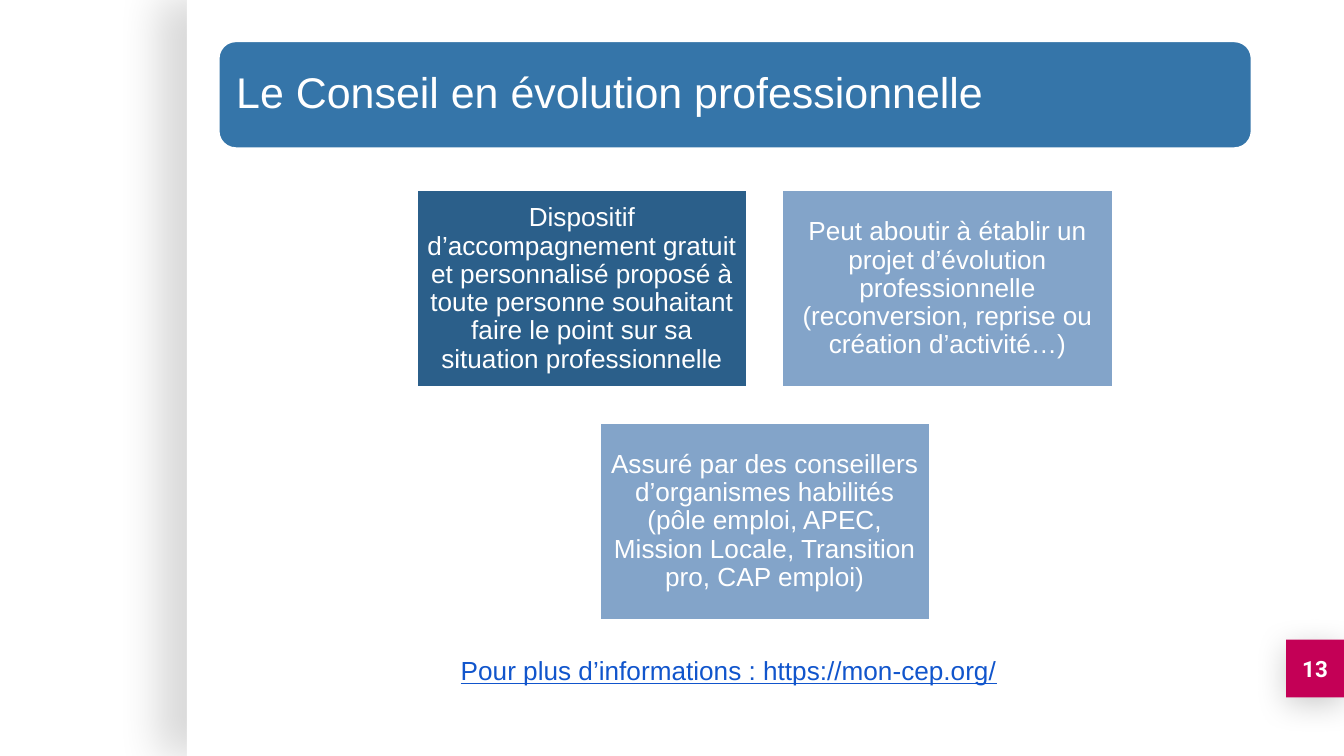
from lxml import etree
from pptx import Presentation
from pptx.dml.color import RGBColor
from pptx.enum.shapes import MSO_SHAPE
from pptx.enum.text import MSO_ANCHOR, PP_ALIGN
from pptx.oxml.ns import qn
from pptx.util import Inches, Pt

RECTANGLE, ROUNDED = MSO_SHAPE.RECTANGLE, MSO_SHAPE.ROUNDED_RECTANGLE
MIDDLE, TOP = MSO_ANCHOR.MIDDLE, MSO_ANCHOR.TOP
LEFT, CENTER = PP_ALIGN.LEFT, PP_ALIGN.CENTER

WHITE = RGBColor(0xFF, 0xFF, 0xFF)
MAGENTA = RGBColor(0xC4, 0x00, 0x56)
BLUE = RGBColor(0x35, 0x75, 0xA9)
DARK_BLUE = RGBColor(0x2B, 0x5F, 0x8A)
LIGHT_BLUE = RGBColor(0x83, 0xA4, 0xC9)
LINK_BLUE = RGBColor(0x11, 0x55, 0xCC)

TITLE = "Le Conseil en évolution professionnelle"
CARD_ROWS = [
    [
        ("Dispositif d’accompagnement gratuit et personnalisé proposé à toute "
         "personne souhaitant faire le point sur sa situation professionnelle", DARK_BLUE),
        ("Peut aboutir à établir un projet d’évolution professionnelle "
         "(reconversion, reprise ou création d’activité…)", LIGHT_BLUE),
    ],
    [
        ("Assuré par des conseillers d’organismes habilités (pôle emploi, APEC, "
         "Mission Locale, Transition pro, CAP emploi)", LIGHT_BLUE),
    ],
]
MORE_INFORMATION = "Pour plus d’informations : https://mon-cep.org/"
PAGE_NUMBER = "13"

SLIDE_WIDTH = 10
SLIDE_HEIGHT = SLIDE_WIDTH * 9 / 16
PANEL_LEFT = 1.39
BADGE_SIZE, BADGE_TOP = 0.43, 4.76
CARD_WIDTH, CARD_HEIGHT, CARD_GAP = 2.47, 1.48, 0.25
CARDS_CENTER, CARDS_TOP = 5.69, 1.41

TITLE_FONT = {"name": "Arial", "size": Pt(23)}
BODY_FONT = {"name": "Arial", "size": Pt(14)}
LINK_FONT = {**BODY_FONT, "underline": True}
BADGE_FONT = {"name": "Roboto", "size": Pt(12), "bold": True}


def add_block(slide, box, fill, geometry=RECTANGLE, outlined=False):
    shape = slide.shapes.add_shape(geometry, *map(Inches, box))
    shape.shadow.inherit = False
    shape.fill.solid()
    shape.fill.fore_color.rgb = fill
    if outlined:
        shape.line.color.rgb = WHITE
        shape.line.width = Pt(2)
    else:
        shape.line.fill.background()
    return shape


def add_shadow(shape, opacity, blur, distance, angle):
    effects = shape._element.spPr.find(qn("a:effectLst"))
    shadow = etree.SubElement(
        effects, qn("a:outerShdw"), blurRad=str(Pt(blur)), dist=str(Pt(distance)),
        dir=str(angle * 60000), algn="bl", rotWithShape="0")
    color = etree.SubElement(shadow, qn("a:srgbClr"), val="000000")
    etree.SubElement(color, qn("a:alpha"), val=str(opacity * 1000))


def write(shape, text, font, color=WHITE, align=CENTER, anchor=MIDDLE,
          inset=(0.1, 0.1), spacing=1.0):
    frame = shape.text_frame
    horizontal, vertical = map(Inches, inset)
    frame_format = {
        "word_wrap": True, "vertical_anchor": anchor,
        "margin_left": horizontal, "margin_right": horizontal,
        "margin_top": vertical, "margin_bottom": vertical,
    }
    for name, value in frame_format.items():
        setattr(frame, name, value)
    paragraph = frame.paragraphs[0]
    paragraph.alignment = align
    paragraph.line_spacing = spacing
    run = paragraph.add_run()
    run.text = text
    for name, value in font.items():
        setattr(run.font, name, value)
    run.font.color.rgb = color


def add_cards(slide):
    for row, cards in enumerate(CARD_ROWS):
        row_width = len(cards) * CARD_WIDTH + (len(cards) - 1) * CARD_GAP
        top = CARDS_TOP + row * (CARD_HEIGHT + CARD_GAP)
        for column, (text, fill) in enumerate(cards):
            left = CARDS_CENTER - row_width / 2 + column * (CARD_WIDTH + CARD_GAP)
            card = add_block(slide, (left, top, CARD_WIDTH, CARD_HEIGHT), fill, outlined=True)
            write(card, text, BODY_FONT, inset=(0.06, 0.06), spacing=0.9)


def main():
    presentation = Presentation()
    presentation.slide_width = Inches(SLIDE_WIDTH)
    presentation.slide_height = Inches(SLIDE_HEIGHT)
    slide = presentation.slides.add_slide(presentation.slide_layouts[6])

    panel = add_block(slide, (PANEL_LEFT, 0, SLIDE_WIDTH - PANEL_LEFT, SLIDE_HEIGHT), WHITE)
    add_shadow(panel, opacity=15, blur=22.5, distance=15, angle=180)

    badge = add_block(
        slide, (SLIDE_WIDTH - BADGE_SIZE, BADGE_TOP, BADGE_SIZE, BADGE_SIZE), MAGENTA)
    add_shadow(badge, opacity=20, blur=16.9, distance=3.8, angle=90)
    write(badge, PAGE_NUMBER, BADGE_FONT)

    banner = add_block(slide, (1.62, 0.3, 7.7, 0.81), BLUE, ROUNDED, outlined=True)
    write(banner, TITLE, TITLE_FONT, align=LEFT, spacing=0.9)

    add_cards(slide)

    link = slide.shapes.add_textbox(*map(Inches, (3.33, 4.82, 6, 0.34)))
    write(link, MORE_INFORMATION, LINK_FONT, LINK_BLUE, LEFT, TOP, (0.1, 0.05))

    presentation.save("out.pptx")


if __name__ == "__main__":
    main()
